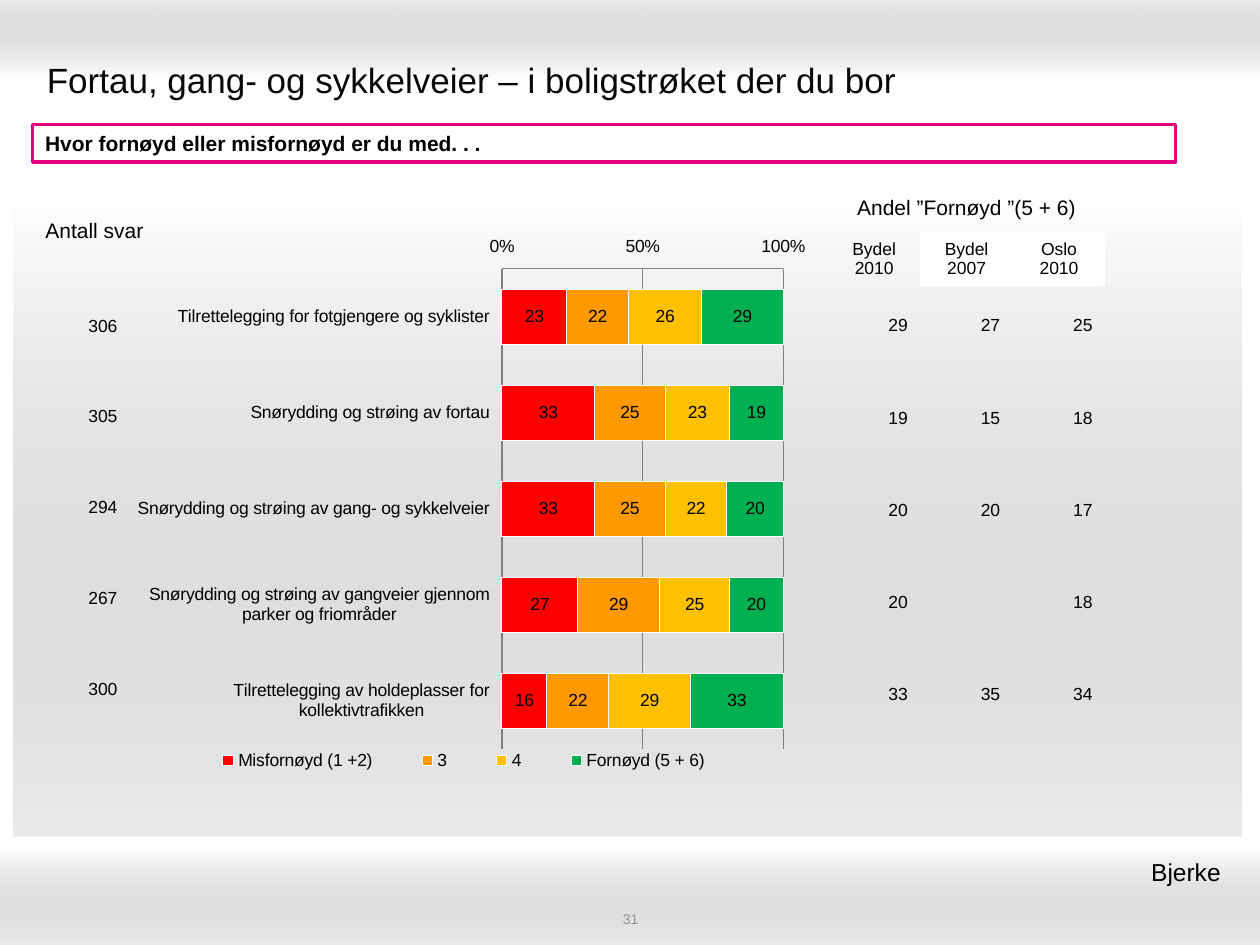
from lxml import etree
from pptx import Presentation
from pptx import util as u
from pptx.chart.data import CategoryChartData
from pptx.dml.color import RGBColor
from pptx.enum import chart as ch, shapes, text
from pptx.oxml import parse_xml
from pptx.oxml.ns import nsdecls, qn


class Theme:
    font = "Arial"
    black = RGBColor.from_string("000000")
    white = RGBColor.from_string("FFFFFF")
    title = RGBColor.from_string("080808")
    muted = RGBColor.from_string("969696")
    band = RGBColor.from_string("999999")
    accent = RGBColor.from_string("E7007E")
    axis = RGBColor.from_string("808080")
    answers = [RGBColor.from_string(c) for c in ("FF0000", "FF9900", "FFC000", "00B050")]
    title_size, place_size, head_size, body_size, number_size = 20, 14, 12, 10, 8


def put_text(tf, value, size, color=Theme.black, align=text.PP_ALIGN.LEFT, bold=False):
    tf.text = value
    for p in tf.paragraphs:
        p.alignment = align
        for r in p.runs:
            r.font.name, r.font.size, r.font.bold = Theme.font, u.Pt(size), bold
            r.font.color.rgb = color


def add_grid(s, left, top, width, heights, rows, size, align):
    """Add a plain table without style, fill or borders."""
    frame = s.shapes.add_table(len(rows), len(rows[0]), u.Cm(left), u.Cm(top),
                               u.Cm(width), u.Cm(sum(heights)))
    table = frame.table
    table.first_row = table.horz_banding = False
    style = next(frame._element.iter(qn("a:tableStyleId")))
    style.text = "{2D5ABB26-0587-4C30-8999-92F81FD0307C}"
    for row, height, values in zip(table.rows, heights, rows):
        row.height = u.Cm(height)
        for cell, value in zip(row.cells, values):
            cell.fill.background()
            cell.vertical_anchor = text.MSO_ANCHOR.MIDDLE
            put_text(cell.text_frame, value, size, align=align)
    return table


prs = Presentation()
prs.slide_width, prs.slide_height = u.Cm(25.4), u.Cm(19.05)
s = prs.slides.add_slide(prs.slide_layouts[5])

# Shaded background bands
for left, top, width, height, angle in [
    (0, 0, 25.4, 1.57, 90),
    (0, 17.07, 25.4, 1.98, 270),
    (0.28, 3.96, 24.74, 12.9, 270),
]:
    sp = s.shapes.add_shape(shapes.MSO_SHAPE.RECTANGLE, u.Cm(left), u.Cm(top),
                            u.Cm(width), u.Cm(height))
    sp.shadow.inherit = False
    sp.line.fill.background()
    sp.fill.gradient()
    sp.fill.gradient_angle = angle
    for stop, color in zip(sp.fill.gradient_stops, (Theme.white, Theme.band)):
        stop.color.rgb = color
    last_color = list(sp._element.iter(qn("a:srgbClr")))[-1]
    etree.SubElement(last_color, qn("a:alpha")).set("val", "20000")

# Title, in front of the bands
title = s.shapes.title
s.shapes._spTree.append(title._element)
title.left, title.top, title.width, title.height = u.Cm(0.69), u.Cm(0.91), u.Cm(24), u.Cm(1.4)
title.text_frame.vertical_anchor = text.MSO_ANCHOR.MIDDLE
put_text(title.text_frame, "Fortau, gang- og sykkelveier – i boligstrøket der du bor",
         Theme.title_size, Theme.title)

# Slide number
sp = s.shapes.add_textbox(u.Cm(8.69), u.Cm(18.34), u.Cm(8.05), u.Cm(0.36))
tf = sp.text_frame
tf.word_wrap = True
tf.margin_top = tf.margin_bottom = 0
tf.vertical_anchor = text.MSO_ANCHOR.MIDDLE
put_text(tf, "31", Theme.number_size, Theme.muted, text.PP_ALIGN.CENTER)

# Question box
sp = s.shapes.add_shape(shapes.MSO_SHAPE.RECTANGLE, u.Cm(0.66), u.Cm(2.51), u.Cm(23.04), u.Cm(0.76))
sp.shadow.inherit = False
sp.fill.solid()
sp.fill.fore_color.rgb = Theme.white
sp.line.color.rgb = Theme.accent
sp.line.width = u.Pt(2)
sp.text_frame.vertical_anchor = text.MSO_ANCHOR.MIDDLE
put_text(sp.text_frame, "Hvor fornøyd eller misfornøyd er du med. . .", Theme.head_size, bold=True)

# Stacked bars of answers
data = CategoryChartData(number_format="0")
data.categories = [
    "Tilrettelegging for fotgjengere og syklister",
    "Snørydding og strøing av fortau",
    "Snørydding og strøing av gang- og sykkelveier",
    "Snørydding og strøing av gangveier gjennom parker og friområder",
    "Tilrettelegging av holdeplasser for kollektivtrafikken",
]
data.add_series("Misfornøyd (1 +2)", (23, 33, 33, 27, 16))
data.add_series("3", (22, 25, 25, 29, 22))
data.add_series("4", (26, 23, 22, 25, 29))
data.add_series("Fornøyd (5 + 6)", (29, 19, 20, 20, 33))
chart = s.shapes.add_chart(ch.XL_CHART_TYPE.BAR_STACKED, u.Cm(2.49), u.Cm(4.55),
                           u.Cm(14), u.Cm(11.53), data).chart
chart.has_title = False
chart.font.name, chart.font.size = Theme.font, u.Pt(Theme.body_size)
chart.font.color.rgb = Theme.black

plot = chart.plots[0]
plot.gap_width, plot.overlap, plot.vary_by_categories = 75, 100, False
for series, color in zip(plot.series, Theme.answers):
    series.format.fill.solid()
    series.format.fill.fore_color.rgb = color
    series.format.line.color.rgb = Theme.white
    labels = series.data_labels
    labels.show_value = True
    labels.number_format, labels.number_format_is_linked = "0", False

cat, val = chart.category_axis, chart.value_axis
cat.reverse_order = True
cat.major_tick_mark = ch.XL_TICK_MARK.NONE
val.major_tick_mark = ch.XL_TICK_MARK.INSIDE
val.minimum_scale, val.maximum_scale, val.major_unit = 0, 100, 50
val.tick_labels.number_format = r"General\%"
val.tick_labels.number_format_is_linked = False
val.has_major_gridlines = True
val.major_gridlines.format.line.color.rgb = Theme.axis
for axis in (cat, val):
    axis.tick_label_position = ch.XL_TICK_LABEL_POSITION.LOW
    axis.format.line.color.rgb = Theme.axis

chart.has_legend = True
legend = chart.legend
legend.position = ch.XL_LEGEND_POSITION.BOTTOM
legend.include_in_layout = False

# Fixed places for plot area and legend, as shares of the chart
for el, index, target, box in [
    (next(chart._chartSpace.iter(qn("c:plotArea"))), 0, '<c:layoutTarget val="inner"/>',
     dict(x=0.545, y=0.075, w=0.405, h=0.84)),
    (legend._element, 1, "", dict(x=0.08, y=0.91, w=0.82, h=0.05)),
]:
    for old in el.findall(qn("c:layout")):
        el.remove(old)
    parts = '<c:xMode val="edge"/><c:yMode val="edge"/>'
    parts += "".join(f'<c:{k} val="{v}"/>' for k, v in box.items())
    el.insert(index, parse_xml(f"<c:layout {nsdecls('c')}><c:manualLayout>{target}{parts}"
                               "</c:manualLayout></c:layout>"))

# Share of satisfied answers
add_grid(s, 16.69, 5.64, 5.59, [1.86] * 5,
         [("29", "27", "25"), ("19", "15", "18"), ("20", "20", "17"), ("20", "", "18"), ("33", "35", "34")],
         Theme.body_size, text.PP_ALIGN.RIGHT)

header = add_grid(s, 16.69, 3.73, 5.59, [0.94, 1.0],
                  [("", "", ""), ("Bydel\n2010", "Bydel\n2007", "Oslo\n2010")],
                  Theme.body_size, text.PP_ALIGN.CENTER)
header.cell(0, 0).merge(header.cell(0, 2))
put_text(header.cell(0, 0).text_frame, "Andel ”Fornøyd ”(5 + 6)", Theme.head_size,
         align=text.PP_ALIGN.CENTER)
for col in (1, 2):
    fill = header.cell(1, col).fill
    fill.solid()
    fill.fore_color.rgb = Theme.white

# Number of answers
add_grid(s, 1.3, 5.66, 1.32, [1.83] * 5, [("306",), ("305",), ("294",), ("267",), ("300",)],
         Theme.body_size, text.PP_ALIGN.RIGHT)
add_grid(s, 0.1, 3.91, 3.61, [1.5], [("Antall svar",)], Theme.head_size, text.PP_ALIGN.CENTER)

# District
sp = s.shapes.add_textbox(u.Cm(15.49), u.Cm(17.15), u.Cm(9.5), u.Cm(1.45))
sp.text_frame.word_wrap = True
sp.text_frame.margin_right = u.Cm(0.38)
put_text(sp.text_frame, "Bjerke", Theme.place_size, align=text.PP_ALIGN.RIGHT)

prs.save("out.pptx")
